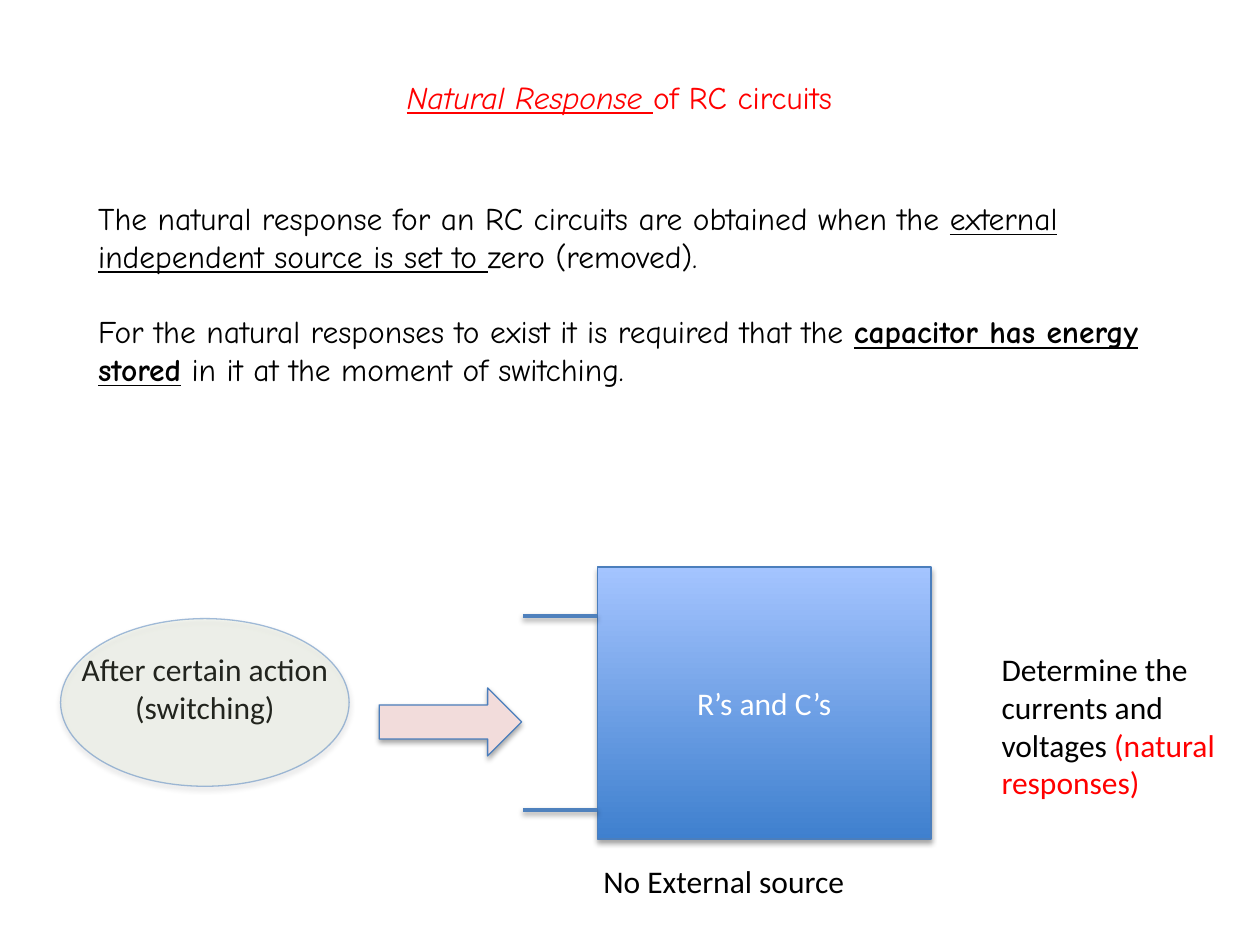
from dataclasses import dataclass

from lxml import etree
from pptx import Presentation
from pptx import util as u
from pptx.dml.color import RGBColor
from pptx.enum import shapes, text
from pptx.oxml import ns


@dataclass(frozen=True)
class Theme:
    hand: str = "Comic Neue"
    sans: str = "Calibri"
    size: float = 18
    ink: str = "000000"
    accent: str = "FF0000"
    white: str = "FFFFFF"
    outline: str = "4B7EBC"
    wire: str = "4F81BD"
    box_bottom: str = "3F80CE"
    box_top: str = "A4C4FF"
    ellipse: str = "D7E4BD"
    arrow: str = "F2DCDB"


THEME = Theme()
CENTER = text.PP_ALIGN.CENTER


def rgb(color):
    return RGBColor.from_string(color)


def points(*lengths):
    return [u.Pt(length) for length in lengths]


def set_alpha(parent, percent):
    """Make the solid colour directly inside parent partly transparent."""
    color = parent.find(ns.qn("a:solidFill")).find(ns.qn("a:srgbClr"))
    etree.SubElement(color, ns.qn("a:alpha"), val=str(percent * 1000))


def add_shadow(shape, opacity=35, distance=1.8):
    """Drop a soft black shadow straight down; call after fill and line."""
    effects = etree.SubElement(shape._element.spPr, ns.qn("a:effectLst"))
    shadow = etree.SubElement(
        effects, ns.qn("a:outerShdw"), blurRad=str(u.Pt(3.1)),
        dist=str(u.Pt(distance)), dir="5400000", rotWithShape="0")
    color = etree.SubElement(shadow, ns.qn("a:srgbClr"), val="000000")
    etree.SubElement(color, ns.qn("a:alpha"), val=str(opacity * 1000))


def add_run(paragraph, words, font=THEME.sans, color=THEME.ink,
            bold=False, italic=False, underline=False):
    run = paragraph.add_run()
    run.text = words
    run.font.name = font
    run.font.size = u.Pt(THEME.size)
    run.font.color.rgb = rgb(color)
    run.font.bold, run.font.italic, run.font.underline = bold, italic, underline


def add_text(slide, area, paragraphs, font=THEME.sans, color=THEME.ink,
             align=text.PP_ALIGN.LEFT, wrap=True, gap=0):
    """Each paragraph is a list of (words, run format) pairs."""
    frame = slide.shapes.add_textbox(*points(*area)).text_frame
    frame.word_wrap = wrap
    frame.auto_size = text.MSO_AUTO_SIZE.SHAPE_TO_FIT_TEXT
    for index, runs in enumerate(paragraphs):
        paragraph = frame.add_paragraph() if index else frame.paragraphs[0]
        paragraph.alignment = align
        if index:
            paragraph.space_before = u.Pt(gap)
        for words, style in runs:
            add_run(paragraph, words, **{"font": font, "color": color, **style})


def add_block(slide, kind, area, fill, fill_alpha=None, line_alpha=None):
    """Outlined, shadowed shape; a pair of fills runs from bottom to top."""
    shape = slide.shapes.add_shape(kind, *points(*area))
    if isinstance(fill, tuple):
        shape.fill.gradient()
        shape.fill.gradient_angle = 90
        for stop, color in zip(shape.fill.gradient_stops, fill):
            stop.color.rgb = rgb(color)
    else:
        shape.fill.solid()
        shape.fill.fore_color.rgb = rgb(fill)
    shape.line.color.rgb = rgb(THEME.outline)
    shape.line.width = u.Pt(0.75)
    properties = shape._element.spPr
    if fill_alpha:
        set_alpha(properties, fill_alpha)
    if line_alpha:
        set_alpha(properties.find(ns.qn("a:ln")), line_alpha)
    add_shadow(shape)
    return shape


def add_wire(slide, left, right, y):
    wire = slide.shapes.add_connector(
        shapes.MSO_CONNECTOR.STRAIGHT, *points(left, y, right, y))
    wire.line.color.rgb = rgb(THEME.wire)
    wire.line.width = u.Pt(2)
    add_shadow(wire, opacity=38, distance=1.6)


def main():
    presentation = Presentation()
    presentation.slide_width, presentation.slide_height = points(720, 540)
    slide = presentation.slides.add_slide(presentation.slide_layouts[6])

    # Explanation and title
    add_text(slide, (49, 110.2, 609.8, 116.6), [
        [("The natural response for an RC circuits are obtained when the ", {}),
         ("external independent source is set to ", {"underline": True}),
         ("zero (removed).", {})],
        [("For the natural responses to exist it is required that the ", {}),
         ("capacitor has energy stored", {"bold": True, "underline": True}),
         (" in it at the moment of switching.", {})],
    ], font=THEME.hand, gap=21.6)
    add_text(slide, (216.7, 41, 274.3, 28.8), [
        [("Natural Response ", {"italic": True, "underline": True}),
         ("of RC circuits", {})],
    ], font=THEME.hand, color=THEME.accent, align=CENTER, wrap=False)

    # Circuit box with its two terminals
    box = add_block(slide, shapes.MSO_SHAPE.RECTANGLE, (341.3, 324, 190.8, 155.5),
                    (THEME.box_bottom, THEME.box_top))
    box.text_frame.vertical_anchor = text.MSO_ANCHOR.MIDDLE
    label = box.text_frame.paragraphs[0]
    label.alignment = CENTER
    add_run(label, "R’s and C’s", color=THEME.white)
    for y in (352.1, 463):
        add_wire(slide, 298.8, 341.3, y)
    add_text(slide, (337.7, 488.9, 154.1, 28.8),
             [[("No External source", {})]], wrap=False)

    # Switching action, seen through the tinted ellipse
    add_text(slide, (34.6, 367.9, 164.9, 51.1),
             [[("After certain action (switching)", {})]], align=CENTER)
    add_block(slide, shapes.MSO_SHAPE.OVAL, (34.6, 353.5, 164.9, 95.8),
              THEME.ellipse, fill_alpha=16, line_alpha=50)
    add_block(slide, shapes.MSO_SHAPE.RIGHT_ARROW, (216.7, 393.1, 81.4, 38.9),
              THEME.arrow)

    # Goal of the analysis
    add_text(slide, (565.2, 367.9, 137.5, 94.3), [
        [("Determine the currents and voltages", {}),
         (" (natural responses)", {"color": THEME.accent})],
    ])

    presentation.save("out.pptx")


if __name__ == "__main__":
    main()
